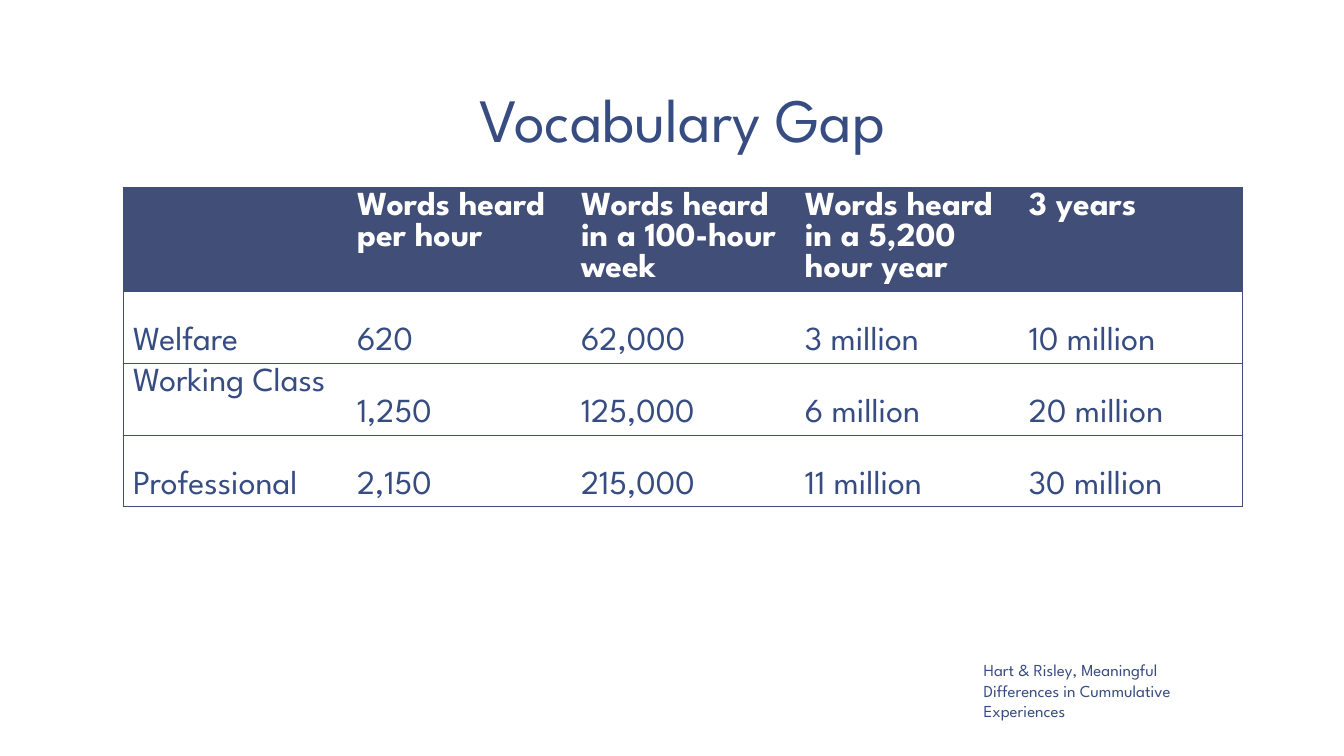
from lxml.etree import SubElement
from pptx import Presentation
from pptx.dml.color import RGBColor
from pptx.enum.text import MSO_ANCHOR as Anchor, MSO_AUTO_SIZE as AutoSize, PP_ALIGN as Align
from pptx.oxml import parse_xml
from pptx.oxml.ns import nsdecls, qn
from pptx.util import Cm, Pt

NAVY = RGBColor(0x41, 0x4E, 0x77)
BLUE = RGBColor(0x37, 0x4C, 0x81)
WHITE = RGBColor(0xFF, 0xFF, 0xFF)
FONT = "League Spartan"
HEADER_HEIGHT, ROW_HEIGHT = 2.62, 1.81
ROWS = [
    ["", "Words heard per hour", "Words heard in a 100-hour week",
     "Words heard in a 5,200 hour year", "3 years"],
    ["Welfare", "620", "62,000", "3 million", "10 million"],
    ["Working Class", "1,250", "125,000", "6 million", "20 million"],
    ["Professional", "2,150", "215,000", "11 million", "30 million"],
]


def set_all(target, values):
    """Set every attribute in values on target."""
    for name, value in values.items():
        setattr(target, name, value)


def style_text(paragraph, size, color, bold=False):
    """Give a paragraph the slide's font, a size and a colour."""
    set_all(paragraph.font, {"name": FONT, "size": Pt(size), "bold": bold})
    paragraph.font.color.rgb = color


def set_borders(cell, sides):
    """Draw thin navy lines on the given sides and none on the others."""
    properties = cell._tc.get_or_add_tcPr()
    for index, side in enumerate("LRTB"):
        line = parse_xml(f'<a:ln{side} {nsdecls("a")} w="6350"/>')
        if side in sides:
            fill = SubElement(line, qn("a:solidFill"))
            SubElement(fill, qn("a:srgbClr"), val=str(NAVY))
        else:
            SubElement(line, qn("a:noFill"))
        properties.insert(index, line)


def add_title(slide, left, top, width, height):
    """Place the slide title in its box."""
    title = slide.shapes.title
    set_all(title, {"left": Cm(left), "top": Cm(top), "width": Cm(width), "height": Cm(height)})
    frame = title.text_frame
    frame.text = "Vocabulary Gap"
    set_all(frame, {
        "vertical_anchor": Anchor.BOTTOM, "auto_size": AutoSize.NONE, "word_wrap": True,
        "margin_left": Cm(0.33), "margin_right": Cm(0.33),
        "margin_top": Cm(0.18), "margin_bottom": Cm(0.18),
    })
    paragraph = frame.paragraphs[0]
    set_all(paragraph, {"alignment": Align.CENTER, "line_spacing": 0.85})
    style_text(paragraph, 44, BLUE)


def add_word_table(slide, left, top, width):
    """Place the table of words heard, with equal columns across the width."""
    height = HEADER_HEIGHT + ROW_HEIGHT * (len(ROWS) - 1)
    table = slide.shapes.add_table(
        len(ROWS), len(ROWS[0]), Cm(left), Cm(top), Cm(width), Cm(height)).table
    table.horz_banding = False
    last_column = len(ROWS[0]) - 1
    for row_index, texts in enumerate(ROWS):
        is_header = row_index == 0
        table.rows[row_index].height = Cm(HEADER_HEIGHT if is_header else ROW_HEIGHT)
        for column_index, text in enumerate(texts):
            cell = table.cell(row_index, column_index)
            cell.text = text
            at_top = is_header or text == "Working Class"
            cell.vertical_anchor = Anchor.TOP if at_top else Anchor.BOTTOM
            style_text(cell.text_frame.paragraphs[0], 24, WHITE if is_header else BLUE, is_header)
            if is_header:
                cell.fill.solid()
                cell.fill.fore_color.rgb = NAVY
            else:
                cell.fill.background()
            outer = {0: "L", last_column: "R"}.get(column_index, "")
            set_borders(cell, "TB" + outer)


def add_source(slide, left, top, width, height):
    """Place the source of the figures."""
    frame = slide.shapes.add_textbox(Cm(left), Cm(top), Cm(width), Cm(height)).text_frame
    set_all(frame, {"word_wrap": True, "auto_size": AutoSize.SHAPE_TO_FIT_TEXT})
    frame.text = "Hart & Risley, Meaningful Differences in Cummulative Experiences"
    style_text(frame.paragraphs[0], 12, BLUE)


def main():
    """Build the slide and save it."""
    presentation = Presentation()
    set_all(presentation, {"slide_width": Cm(33.87), "slide_height": Cm(19.05)})
    slide = presentation.slides.add_slide(presentation.slide_layouts[5])
    slide.background.fill.solid()
    slide.background.fill.fore_color.rgb = WHITE
    add_title(slide, 3.1, 0.2, 28.22, 3.89)
    add_word_table(slide, 3.1, 4.72, 28.22)
    add_source(slide, 24.54, 16.51, 6.15, 1.8)
    presentation.save("out.pptx")


if __name__ == "__main__":
    main()
